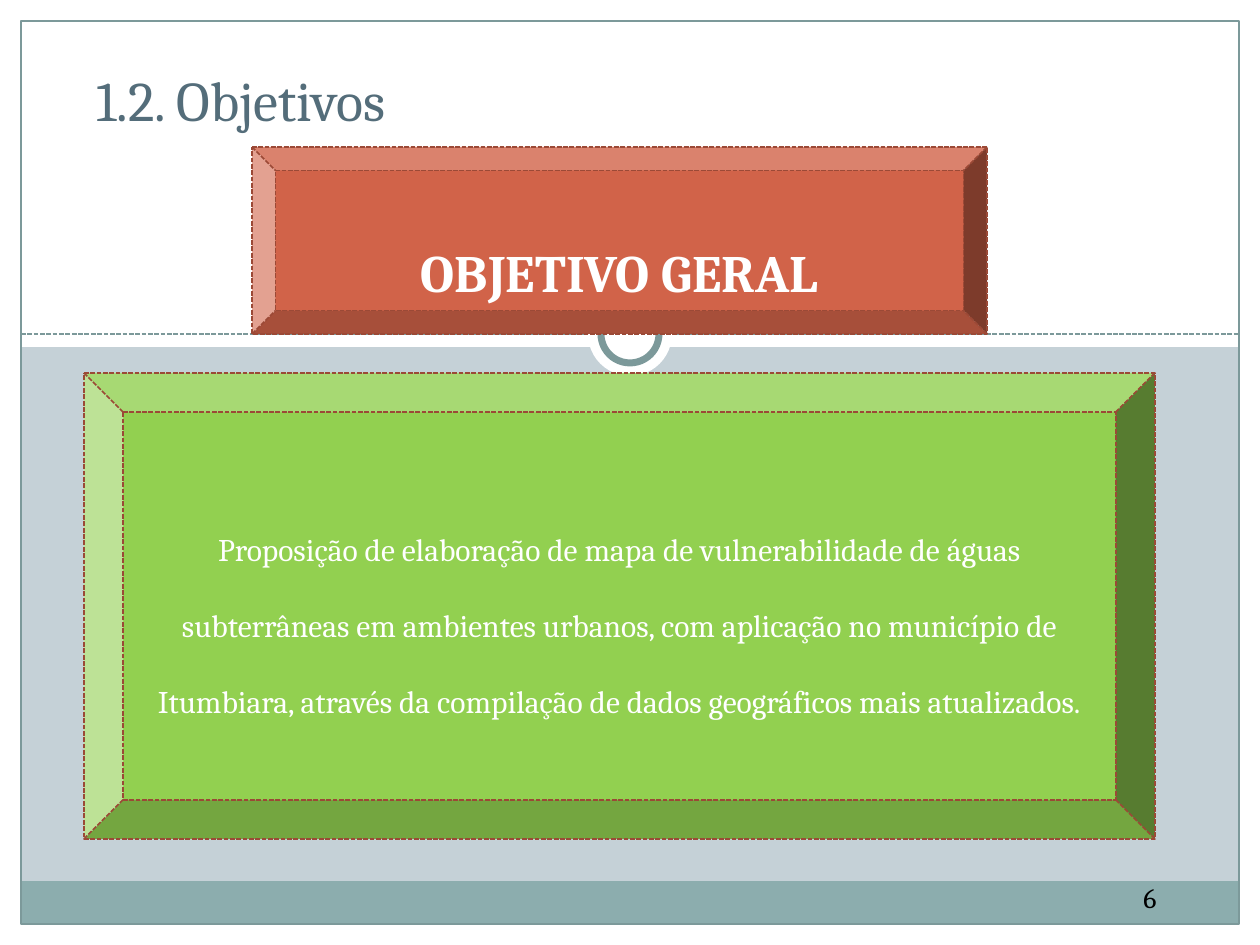
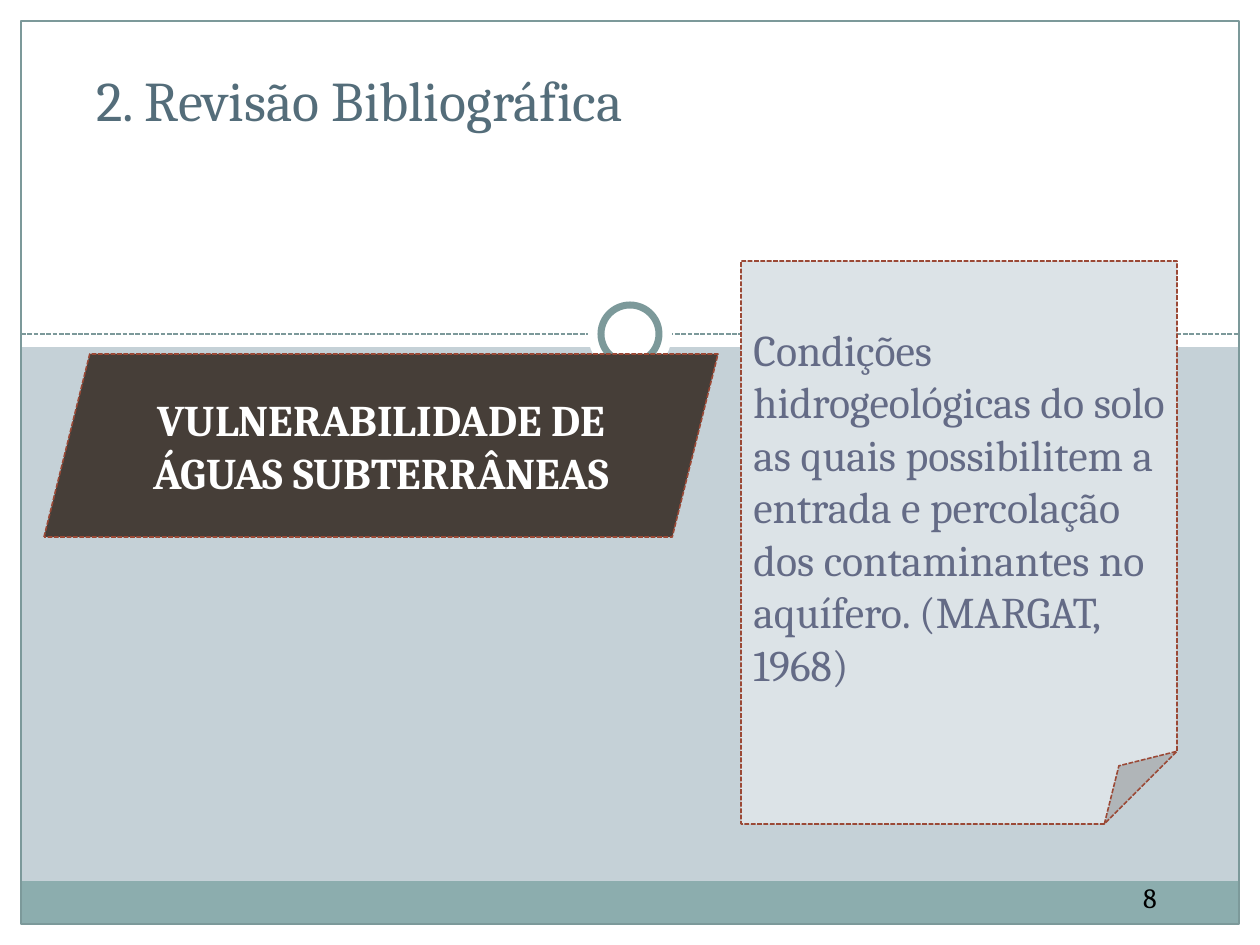
from pptx import Presentation
from pptx.dml.color import RGBColor
from pptx.enum.dml import MSO_LINE_DASH_STYLE as Dash
from pptx.enum.shapes import MSO_CONNECTOR, MSO_SHAPE as Shape
from pptx.enum.text import MSO_ANCHOR as Anchor, PP_ALIGN as Align
from pptx.oxml.ns import qn
from pptx.util import Pt
from lxml.etree import SubElement

EMU_PER_PX = 914400 / 126
SLIDE_BOX = (0, 0, 1260, 945)
TITLE_BOX = (84, 63, 1071, 76)
MARGIN, HEADER_H, RULE_Y, FOOTER_H = 21, 347, 334, 43
FONT = "Cambria"
WHITE, BLACK, TEAL, FOOTER = "FFFFFF", "000000", "7C999A", "8CADAE"
BACKDROP, TITLE, BRICK, ORANGE = "C5D1D7", "546D7A", "9B4936", "D16349"
GREEN, BROWN, PAPER, INK = "92D050", "463E38", "DCE3E7", "646B86"
DASHED_BRICK = (BRICK, 0.9, Dash.SQUARE_DOT)


def px(*lengths):
    """Turn lengths in px into EMU."""
    return [round(length * EMU_PER_PX) for length in lengths]


def color(hex_code):
    """Turn a hex string into a colour."""
    return RGBColor.from_string(hex_code)


def set_all(target, values):
    """Set every attribute of the target from a dict."""
    for name, value in values.items():
        setattr(target, name, value)


def draw_line(line, hex_code, width, dash=None):
    """Give a line its colour, width and dash."""
    line.color.rgb = color(hex_code)
    set_all(line, {"width": Pt(width), "dash_style": dash})


def write(holder, text, size, hex_code, bold=False, align=Align.LEFT,
          spacing=None, anchor=Anchor.MIDDLE, inset=None):
    """Write one formatted paragraph into a shape or text box."""
    frame = holder.text_frame
    set_all(frame, {"word_wrap": True, "vertical_anchor": anchor})
    if inset is not None:
        sides = ("left", "top", "right", "bottom")
        set_all(frame, {f"margin_{side}": px(inset)[0] for side in sides})
    paragraph = frame.paragraphs[0]
    set_all(paragraph, {"alignment": align, "line_spacing": spacing})
    run = paragraph.add_run()
    run.text = text
    set_all(run.font, {"name": FONT, "size": Pt(size), "bold": bold})
    run.font.color.rgb = color(hex_code)


def add_panel(slide, kind, box, fill=None, line=None):
    """Add a flat preset shape with optional fill and line."""
    panel = slide.shapes.add_shape(kind, *px(*box))
    panel.shadow.inherit = False
    if fill:
        panel.fill.solid()
        panel.fill.fore_color.rgb = color(fill)
    else:
        panel.fill.background()
    if line:
        draw_line(panel.line, *line)
    else:
        panel.line.fill.background()
    return panel


def add_rule(slide, left, right, y):
    """Add the dashed rule under the header."""
    rule = slide.shapes.add_connector(
        MSO_CONNECTOR.STRAIGHT, *px(left, y, right, y))
    draw_line(rule.line, TEAL, 0.9, Dash.SQUARE_DOT)
    SubElement(rule._element.spPr, qn("a:effectLst"))


def add_ring(slide, center_x, center_y):
    """Add the white disc and teal ring centred on the rule."""
    for diameter, line in ((84, None), (58, (TEAL, 4))):
        corner = (center_x - diameter / 2, center_y - diameter / 2)
        add_panel(slide, Shape.OVAL, (*corner, diameter, diameter), WHITE, line)


def add_backdrop(slide, box):
    """Draw the white margins, header, footer band, frame and ring."""
    x, y, width, height = box
    right, bottom = x + width - MARGIN, y + height - MARGIN
    inner_width = width - 2 * MARGIN
    slide.background.fill.solid()
    slide.background.fill.fore_color.rgb = color(BACKDROP)
    bands = (
        ((x, bottom, width, MARGIN), WHITE),
        ((right, y, MARGIN, height), WHITE),
        ((x, y, MARGIN, height), WHITE),
        ((x, y, width, HEADER_H), WHITE),
        ((x + MARGIN, bottom - FOOTER_H, inner_width, FOOTER_H), FOOTER),
    )
    for band_box, fill in bands:
        add_panel(slide, Shape.RECTANGLE, band_box, fill)
    add_rule(slide, x + MARGIN, right, y + RULE_Y)
    frame_box = (x + MARGIN, y + MARGIN, inner_width, height - 2 * MARGIN)
    add_panel(slide, Shape.RECTANGLE, frame_box, line=(TEAL, 0.75))
    add_ring(slide, x + width / 2, y + RULE_Y)


def add_page_number(slide, box, number):
    """Write the page number in the right part of the footer."""
    x, y, width, height = box
    number_box = (x + width - 190, y + height - 73, 160, 50)
    holder = slide.shapes.add_textbox(*px(*number_box))
    write(holder, number, 16, BLACK, align=Align.CENTER, inset=6)


def add_title(slide, box, text):
    """Write the slide title."""
    holder = slide.shapes.add_textbox(*px(*box))
    write(holder, text, 32, TITLE, anchor=Anchor.BOTTOM)


def start_slide(deck, title, number):
    """Add a slide with everything the slides share."""
    slide = deck.slides.add_slide(deck.slide_layouts[6])
    add_backdrop(slide, SLIDE_BOX)
    add_page_number(slide, SLIDE_BOX, number)
    add_title(slide, TITLE_BOX, title)
    return slide


def add_goal(slide, box):
    """Draw the goal heading above its statement, both bevelled."""
    x, y, width, height = box
    heading = add_panel(slide, Shape.BEVEL, (x + 168, y, 735, 187),
                        ORANGE, DASHED_BRICK)
    write(heading, "OBJETIVO GERAL", 30, WHITE, True, Align.CENTER, 2.0)
    statement = add_panel(slide, Shape.BEVEL, (x, y + 226, width, height - 226),
                          GREEN, DASHED_BRICK)
    statement.adjustments[0] = 0.084
    write(statement,
          "Proposição de elaboração de mapa de vulnerabilidade de águas "
          "subterrâneas em ambientes urbanos, com aplicação no município de "
          "Itumbiara, através da compilação de dados geográficos mais "
          "atualizados.", 18, WHITE, align=Align.CENTER, spacing=2.0)


def add_concept(slide, box):
    """Draw the concept on the left and its definition on the right."""
    x, y, width, height = box
    concept = add_panel(slide, Shape.PARALLELOGRAM, (x, y + 93, 674, 183),
                        BROWN, DASHED_BRICK)
    write(concept, "VULNERABILIDADE DE ÁGUAS SUBTERRÂNEAS", 25, WHITE, True,
          Align.CENTER)
    definition = add_panel(slide, Shape.FOLDED_CORNER,
                           (x + width - 436, y, 436, height),
                           PAPER, DASHED_BRICK)
    write(definition,
          "Condições hidrogeológicas do solo as quais possibilitem a entrada "
          "e percolação dos contaminantes no aquífero. (MARGAT, 1968)",
          25, INK)


def main():
    """Build and save the deck."""
    deck = Presentation()
    deck.slide_width, deck.slide_height = px(*SLIDE_BOX[2:])
    add_goal(start_slide(deck, "1.2. Objetivos", "6"), (84, 147, 1071, 692))
    add_concept(start_slide(deck, "2. Revisão Bibliográfica", "8"),
                (44, 261, 1133, 563))
    deck.save("out.pptx")


if __name__ == "__main__":
    main()
